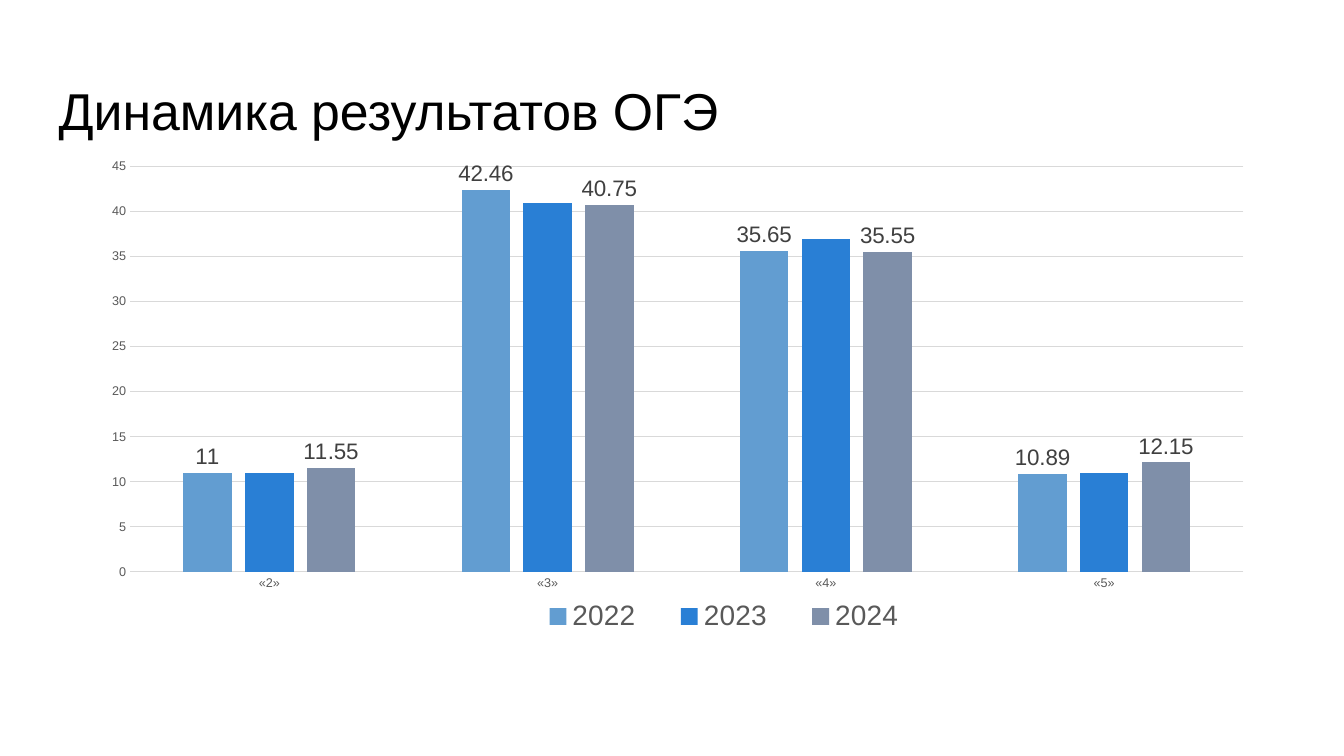
"""Build the slide comparing exam results over three years."""
from lxml.etree import SubElement
from pptx import Presentation
from pptx.chart.data import CategoryChartData
from pptx.dml.color import RGBColor
from pptx.enum.chart import XL_CHART_TYPE, XL_LABEL_POSITION, XL_LEGEND_POSITION, XL_TICK_MARK
from pptx.oxml.ns import qn
from pptx.util import Cm, Pt

TITLE = "Динамика результатов ОГЭ"
GRADES = ["«2»", "«3»", "«4»", "«5»"]
RESULTS = [
    {"year": "2022", "shares": [11, 42.46, 35.65, 10.89], "labelled": True},
    {"year": "2023", "shares": [11, 41, 37, 11], "labelled": False},
    {"year": "2024", "shares": [11.55, 40.75, 35.55, 12.15], "labelled": True},
]
THEME = {
    "font": "Arial",
    "title": "000000", "axis": "595959", "grid": "D9D9D9", "label": "404040",
    "years": ["629DD1", "297FD5", "7F8FA9"],
    "title_size": 37, "axis_size": 9, "label_size": 16, "legend_size": 20,
}
TITLE_BOX = (1.15, 1.65, 31.55, 2.11)
CHART_BOX = (2.24, 3.76, 29.72, 12.62)
PLOT_SHARE = {"x": 0.035, "y": 0.035, "w": 0.944, "h": 0.809}
LEGEND_SHARE = {"x": 0.36, "y": 0.888, "w": 0.357, "h": 0.09}


def style_font(font, size, color):
    font.name = THEME["font"]
    font.size = Pt(THEME[size])
    font.color.rgb = RGBColor.from_string(THEME[color])


def style_line(line):
    line.color.rgb = RGBColor.from_string(THEME["grid"])
    line.width = Pt(0.75)


def set_layout(element, share, after, inner=False):
    for old in element.findall(qn("c:layout")):
        element.remove(old)
    layout = SubElement(element, qn("c:layout"))
    manual = SubElement(layout, qn("c:manualLayout"))
    if inner:
        SubElement(manual, qn("c:layoutTarget")).set("val", "inner")
    for side in "xy":
        SubElement(manual, qn(f"c:{side}Mode")).set("val", "edge")
    for side, value in share.items():
        SubElement(manual, qn(f"c:{side}")).set("val", str(value))
    if after:
        element.find(qn(after)).addnext(layout)
    else:
        element.insert(0, layout)


def add_title(page):
    box = page.shapes.add_textbox(*map(Cm, TITLE_BOX))
    frame = box.text_frame
    frame.word_wrap = True
    frame.margin_left = frame.margin_right = Cm(0.33)
    frame.margin_top = frame.margin_bottom = Cm(0.33)
    frame.text = TITLE
    style_font(frame.paragraphs[0].runs[0].font, "title_size", "title")


def add_results_chart(page):
    data = CategoryChartData()
    data.categories = GRADES
    for result in RESULTS:
        data.add_series(result["year"], result["shares"])
    chart = page.shapes.add_chart(
        XL_CHART_TYPE.COLUMN_CLUSTERED, *map(Cm, CHART_BOX), data).chart
    chart.has_title = False
    style_font(chart.font, "axis_size", "axis")

    plot = chart.plots[0]
    plot.gap_width, plot.overlap, plot.vary_by_categories = 219, -27, False
    for series, result, color in zip(plot.series, RESULTS, THEME["years"]):
        series.format.fill.solid()
        series.format.fill.fore_color.rgb = RGBColor.from_string(color)
        if result["labelled"]:
            labels = series.data_labels
            labels.show_value = True
            labels.position = XL_LABEL_POSITION.OUTSIDE_END
            style_font(labels.font, "label_size", "label")

    for axis in (chart.category_axis, chart.value_axis):
        axis.major_tick_mark = axis.minor_tick_mark = XL_TICK_MARK.NONE
        style_font(axis.tick_labels.font, "axis_size", "axis")
    style_line(chart.category_axis.format.line)
    values = chart.value_axis
    values.minimum_scale, values.maximum_scale, values.major_unit = 0, 45, 5
    values.format.line.fill.background()
    style_line(values.major_gridlines.format.line)

    chart.has_legend = True
    legend = chart.legend
    legend.position = XL_LEGEND_POSITION.BOTTOM
    legend.include_in_layout = False
    style_font(legend.font, "legend_size", "axis")
    plot_area = chart.element.find(f".//{qn('c:plotArea')}")
    set_layout(plot_area, PLOT_SHARE, None, inner=True)
    set_layout(chart.element.find(f".//{qn('c:legend')}"), LEGEND_SHARE, "c:legendPos")


def main():
    deck = Presentation()
    deck.slide_width, deck.slide_height = Cm(33.87), Cm(19.05)
    page = deck.slides.add_slide(deck.slide_layouts[6])
    add_title(page)
    add_results_chart(page)
    deck.save("out.pptx")


if __name__ == "__main__":
    main()
